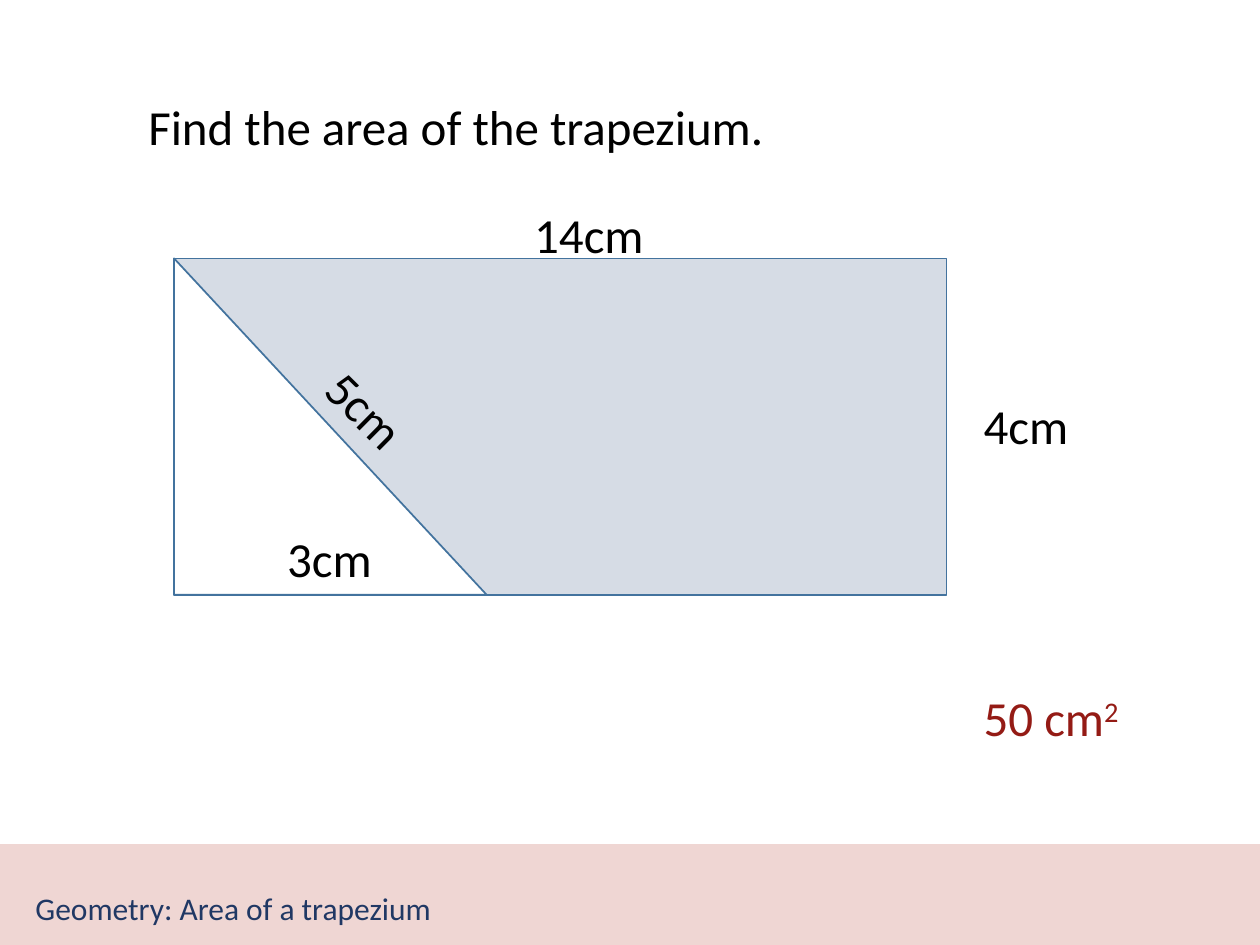
"""Build a geometry slide asking for the area of a trapezium."""
import pptx
import pptx.dml.color
import pptx.enum.shapes
import pptx.enum.text
import pptx.util

Cm = pptx.util.Cm
RGBColor = pptx.dml.color.RGBColor
SHAPES = pptx.enum.shapes.MSO_SHAPE
ANCHORS = pptx.enum.text.MSO_ANCHOR

BLACK = RGBColor(0, 0, 0)
WHITE = RGBColor(0xFF, 0xFF, 0xFF)
NAVY = RGBColor(0x20, 0x38, 0x64)
RED = RGBColor(0x94, 0x1B, 0x15)
PINK = RGBColor(0xEF, 0xD6, 0xD3)
PALE_BLUE = RGBColor(0xD6, 0xDC, 0xE5)
BLUE = RGBColor(0x43, 0x73, 0x9E)

PAGE_WIDTH, PAGE_HEIGHT = 25.4, 19.05
BAND_HEIGHT = 2.01
LEFT, TOP, WIDTH, HEIGHT = 3.51, 5.21, 15.57, 6.78
TRIANGLE_WIDTH = 6.3
LABEL_HEIGHT = 1.45

TITLE = "Geometry: Area of a trapezium"
LABELS = [
    ("Find the area of the trapezium.", 2.74, 1.83, 13.06, {}),
    ("4cm", 19.58, 7.85, 2.24, {}),
    ("14cm", 10.52, 3.99, 2.74, {}),
    ("3cm", 5.54, 10.52, 2.24, {}),
    ("5cm", 6.27, 7.54, 2.24, {"rotation": 44.8}),
    ("50 cm", 19.58, 13.74, 3.3, {"color": RED, "superscript": "2"}),
]


def write(box, text, size=28, color=BLACK, anchor=ANCHORS.TOP, wrap=False,
          superscript="", rotation=0):
    box.rotation = rotation
    frame = box.text_frame
    frame.word_wrap = wrap
    frame.vertical_anchor = anchor
    para = frame.paragraphs[0]
    para.alignment = pptx.enum.text.PP_ALIGN.LEFT
    for content, baseline in ((text, 0), (superscript, 30000)):
        if not content:
            continue
        span = para.add_run()
        span.text = content
        span.font.name = "Calibri"
        span.font.size = pptx.util.Pt(size)
        span.font.color.rgb = color
        if baseline:
            span.font._element.set("baseline", str(baseline))


def draw(page, kind, left, top, width, height, fill, line):
    shape = page.shapes.add_shape(kind, Cm(left), Cm(top), Cm(width), Cm(height))
    shape.shadow.inherit = False
    shape.fill.solid()
    shape.fill.fore_color.rgb = fill
    shape.line.color.rgb = line
    shape.line.width = pptx.util.Pt(1)
    return shape


def main():
    deck = pptx.Presentation()
    deck.slide_width, deck.slide_height = Cm(PAGE_WIDTH), Cm(PAGE_HEIGHT)
    page = deck.slides.add_slide(deck.slide_layouts[5])

    band = draw(page, SHAPES.RECTANGLE, 0, PAGE_HEIGHT - BAND_HEIGHT,
                PAGE_WIDTH, BAND_HEIGHT, PINK, PINK)
    title = page.shapes.title
    title._element.addprevious(band._element)
    title.left, title.top, title.width, title.height = map(Cm, (0.46, 17.86, 22.02, 0.89))
    write(title, TITLE, size=18, color=NAVY, anchor=ANCHORS.MIDDLE, wrap=True)

    draw(page, SHAPES.RECTANGLE, LEFT, TOP, WIDTH, HEIGHT, PALE_BLUE, BLUE)
    triangle = draw(page, SHAPES.ISOSCELES_TRIANGLE, LEFT, TOP,
                    TRIANGLE_WIDTH, HEIGHT, WHITE, BLUE)
    triangle.adjustments[0] = 0

    for text, left, top, width, style in LABELS:
        box = page.shapes.add_textbox(Cm(left), Cm(top), Cm(width), Cm(LABEL_HEIGHT))
        write(box, text, **style)

    deck.save("out.pptx")


if __name__ == "__main__":
    main()
